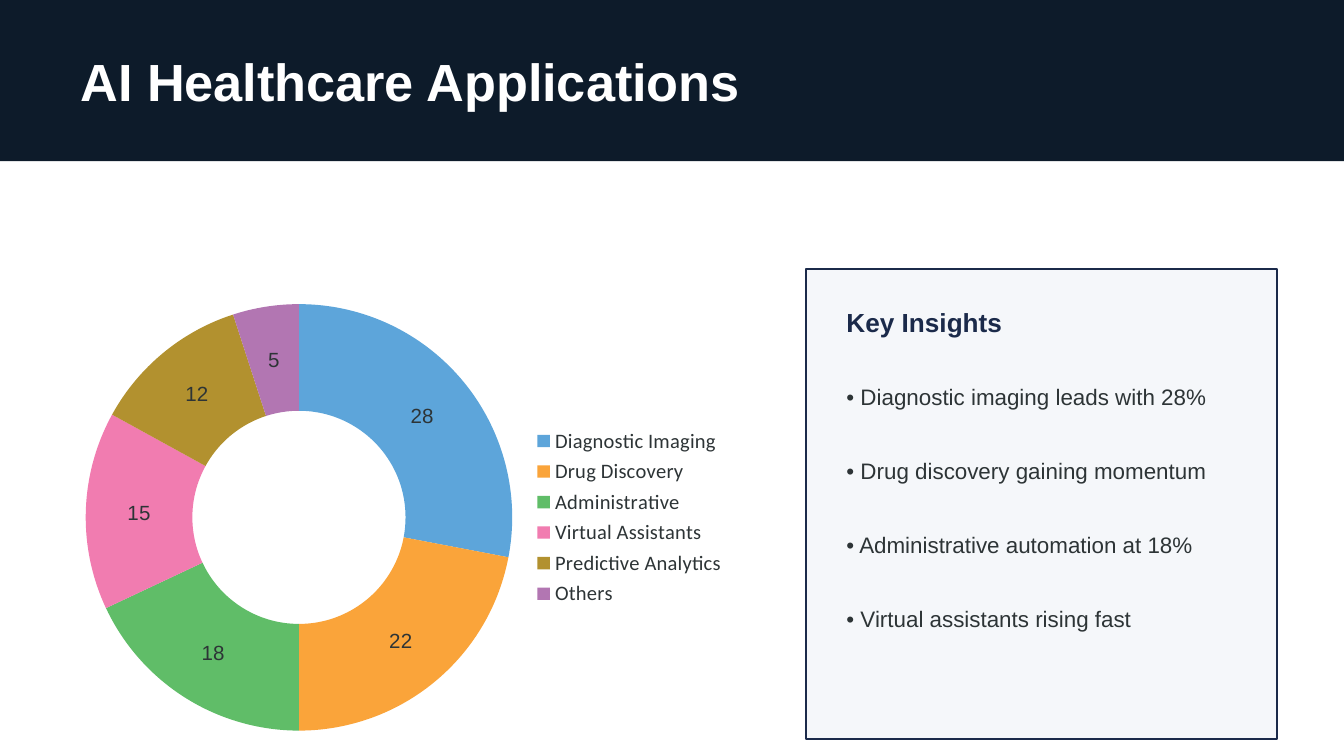
from pptx import Presentation
from pptx.chart.data import CategoryChartData
from pptx.dml.color import RGBColor
from pptx.enum.chart import XL_CHART_TYPE, XL_LEGEND_POSITION
from pptx.enum.shapes import MSO_SHAPE
from pptx.enum.text import MSO_ANCHOR
from pptx.util import Inches, Pt

DOUGHNUT = XL_CHART_TYPE.DOUGHNUT
LEGEND_RIGHT = XL_LEGEND_POSITION.RIGHT
RECTANGLE = MSO_SHAPE.RECTANGLE
MIDDLE = MSO_ANCHOR.MIDDLE

WHITE = RGBColor(0xFF, 0xFF, 0xFF)
DARK = RGBColor(0x0D, 0x1B, 0x2A)
NAVY = RGBColor(0x1B, 0x2A, 0x4A)
INK = RGBColor(0x2D, 0x34, 0x36)
PALE = RGBColor(0xF5, 0xF7, 0xFA)
EDGE = RGBColor(0xF9, 0xF9, 0xF9)

TITLE = "AI Healthcare Applications"
APPLICATIONS = [
    ("Diagnostic Imaging", 28, RGBColor(0x5D, 0xA5, 0xDA)),
    ("Drug Discovery", 22, RGBColor(0xFA, 0xA4, 0x3A)),
    ("Administrative", 18, RGBColor(0x60, 0xBD, 0x68)),
    ("Virtual Assistants", 15, RGBColor(0xF1, 0x7C, 0xB0)),
    ("Predictive Analytics", 12, RGBColor(0xB2, 0x91, 0x2F)),
    ("Others", 5, RGBColor(0xB2, 0x76, 0xB2)),
]
INSIGHTS_HEADING = "Key Insights"
INSIGHTS = [
    "Diagnostic imaging leads with 28%",
    "Drug discovery gaining momentum",
    "Administrative automation at 18%",
    "Virtual assistants rising fast",
]

SLIDE_W = 10
SLIDE_H = SLIDE_W * 9 / 16
MARGIN = 0.5
BAND_H = 1.2
CARD_X, CARD_Y, CARD_SIZE = 6, 2, 3.5
CARD_PAD = 0.2
INSIGHT_Y, INSIGHT_H, INSIGHT_PITCH = CARD_Y + 0.7, 0.5, 0.55

TITLE_FONT = {"name": "Arial", "size": Pt(28), "bold": True}
HEADING_FONT = {"name": "Arial", "size": Pt(14), "bold": True}
BODY_FONT = {"name": "Arial", "size": Pt(12)}
LABEL_FONT = {"name": "Arial", "size": Pt(11)}
LEGEND_FONT = {"name": "Calibri", "size": Pt(11)}


def set_font(font, values, color):
    for name, value in values.items():
        setattr(font, name, value)
    font.color.rgb = color


def add_box(s, box, fill, line=None):
    sp = s.shapes.add_shape(RECTANGLE, *map(Inches, box))
    sp.shadow.inherit = False
    sp.fill.solid()
    sp.fill.fore_color.rgb = fill
    if line is None:
        sp.line.fill.background()
    else:
        sp.line.color.rgb = line
        sp.line.width = Pt(1)


def add_text(s, box, text, values, color):
    tf = s.shapes.add_textbox(*map(Inches, box)).text_frame
    tf.word_wrap = True
    tf.vertical_anchor = MIDDLE
    r = tf.paragraphs[0].add_run()
    r.text = text
    set_font(r.font, values, color)


def add_applications_chart(s, box):
    names, shares, colors = zip(*APPLICATIONS)
    data = CategoryChartData()
    data.categories = names
    data.add_series("Series 1", shares)
    chart = s.shapes.add_chart(DOUGHNUT, *map(Inches, box), data).chart
    chart.has_title = False
    set_font(chart.font, LEGEND_FONT, INK)

    chart.has_legend = True
    chart.legend.position = LEGEND_RIGHT
    chart.legend.include_in_layout = False
    set_font(chart.legend.font, LEGEND_FONT, INK)

    plot = chart.plots[0]
    plot.vary_by_categories = True
    series = plot.series[0]
    series.format.line.color.rgb = EDGE
    series.format.line.width = Pt(0.75)
    for i, color in enumerate(colors):
        fill = series.points[i].format.fill
        fill.solid()
        fill.fore_color.rgb = color

    labels = series.data_labels
    labels.show_value = True
    labels.show_percentage = False
    set_font(labels.font, LABEL_FONT, INK)


def main():
    prs = Presentation()
    prs.slide_width, prs.slide_height = Inches(SLIDE_W), Inches(SLIDE_H)
    s = prs.slides.add_slide(prs.slide_layouts[6])

    add_box(s, (0, 0, SLIDE_W, BAND_H), DARK)
    add_text(s, (MARGIN, BAND_H / 4, SLIDE_W - 2 * MARGIN, BAND_H / 2),
             TITLE, TITLE_FONT, WHITE)

    add_applications_chart(s, (MARGIN, 1.6, 5, 4.5))

    add_box(s, (CARD_X, CARD_Y, CARD_SIZE, CARD_SIZE), PALE, NAVY)
    text_x, text_w = CARD_X + CARD_PAD, CARD_SIZE - 2 * CARD_PAD
    add_text(s, (text_x, CARD_Y + CARD_PAD, text_w, 0.4),
             INSIGHTS_HEADING, HEADING_FONT, NAVY)
    for row, insight in enumerate(INSIGHTS):
        y = INSIGHT_Y + row * INSIGHT_PITCH
        add_text(s, (text_x, y, text_w, INSIGHT_H), f"• {insight}", BODY_FONT, INK)

    prs.save("out.pptx")


if __name__ == "__main__":
    main()
